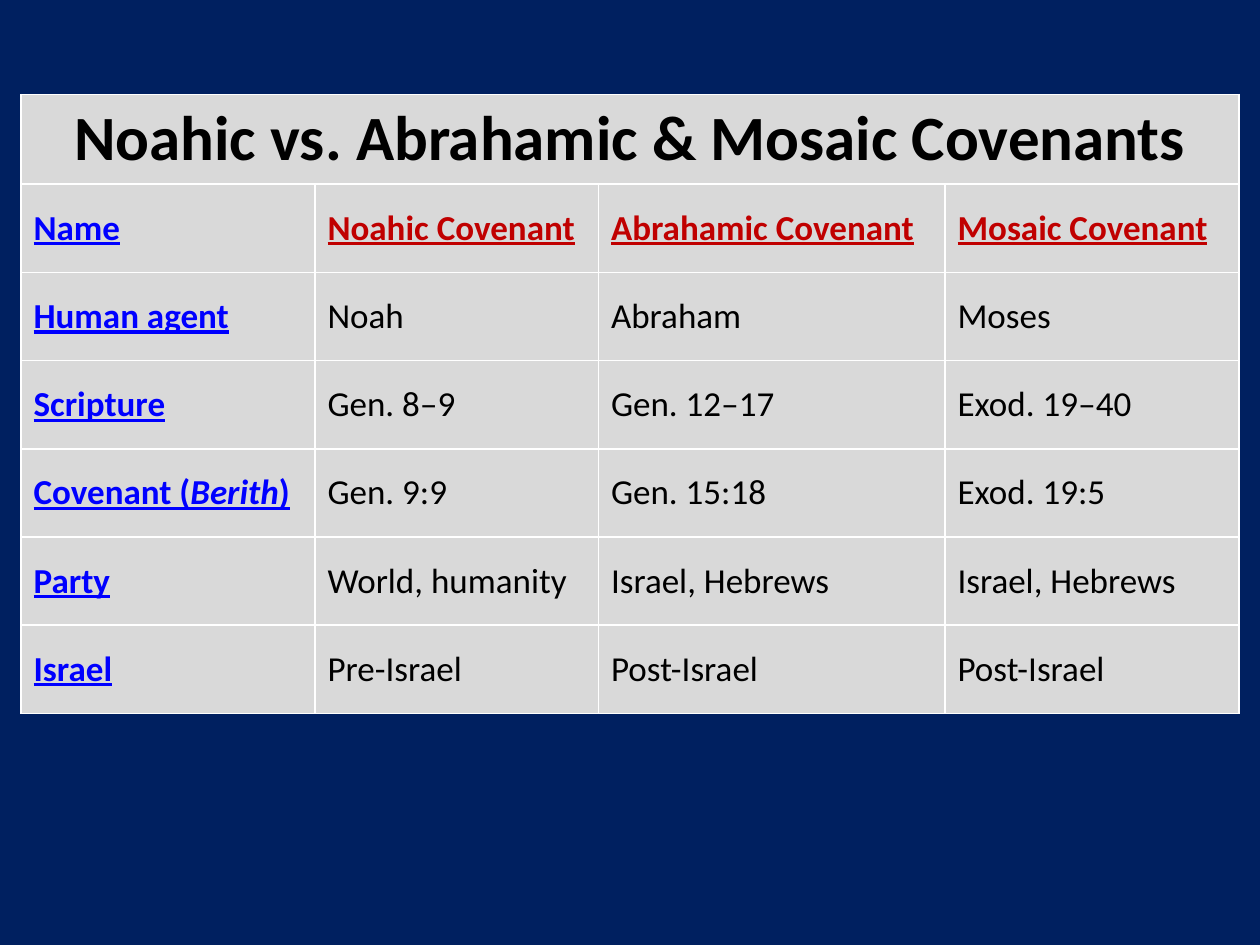
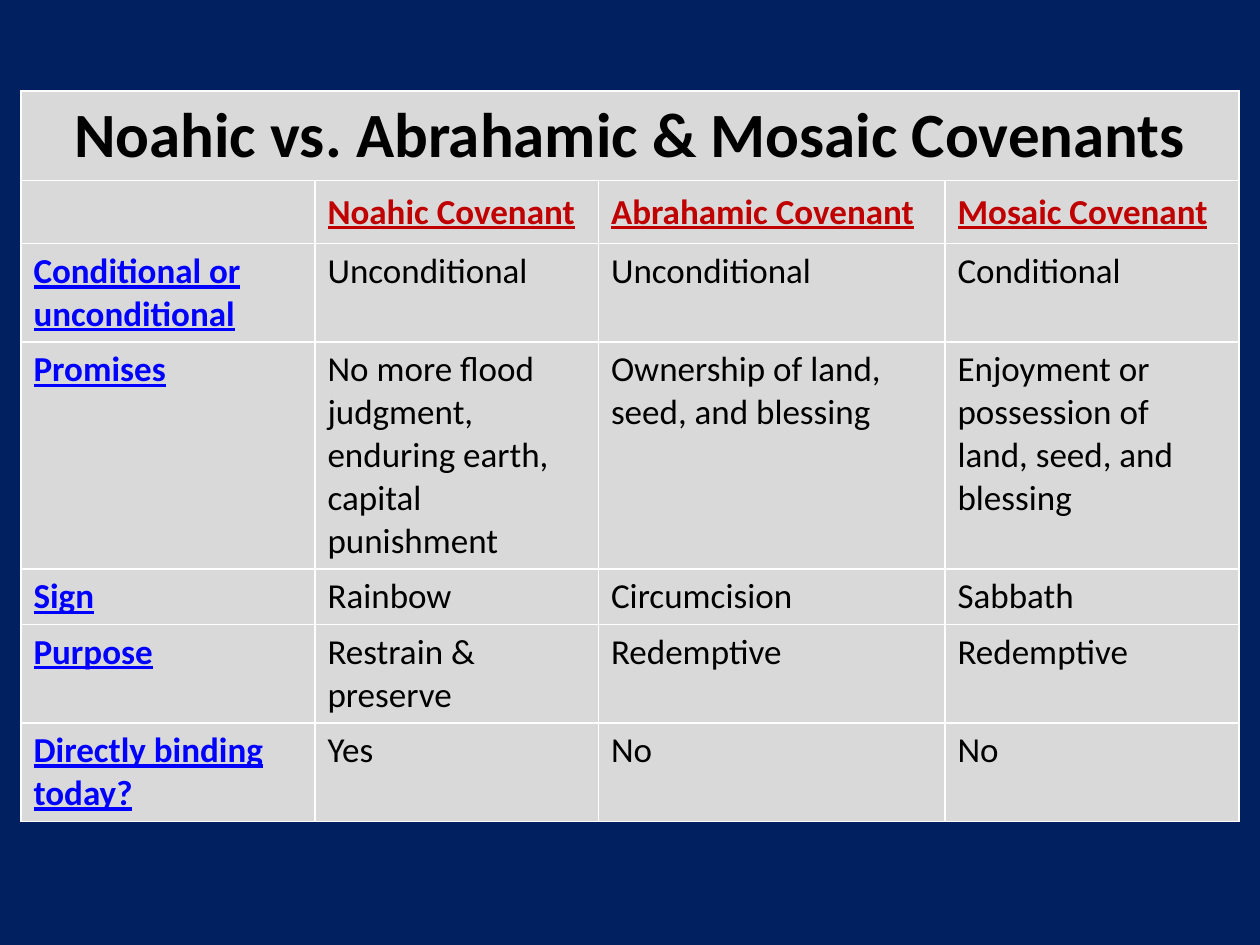
from dataclasses import dataclass

from lxml.etree import SubElement
from pptx import Presentation
from pptx.dml.color import RGBColor as Rgb
from pptx.enum.text import MSO_ANCHOR as Anchor, PP_ALIGN as Align
from pptx.oxml.ns import qn
from pptx.util import Pt


@dataclass(frozen=True)
class Theme:
    back: str = "002060"
    panel: str = "D9D9D9"
    rule: str = "FFFFFF"
    ink: str = "000000"
    label: str = "0000FF"
    head: str = "C00000"
    font: str = "Calibri"
    title: int = 36
    body: int = 20


theme = Theme()
title = "Noahic vs. Abrahamic & Mosaic Covenants"
heads = ["Noahic Covenant", "Abrahamic Covenant", "Mosaic Covenant"]
widths = [168, 162, 198, 168]
left = 12

# Asterisks enclose italic words.
tables = [
    {
        "top": 54,
        "heights": [50.4] * 7,
        "anchor": Anchor.MIDDLE,
        "rows": [
            ["Name", *heads],
            ["Human agent", "Noah", "Abraham", "Moses"],
            ["Scripture", "Gen. 8‒9", "Gen. 12‒17", "Exod. 19‒40"],
            ["Covenant (*Berith*)", "Gen. 9:9", "Gen. 15:18", "Exod. 19:5"],
            ["Party", "World, humanity", "Israel, Hebrews", "Israel, Hebrews"],
            ["Israel", "Pre-Israel", "Post-Israel", "Post-Israel"],
        ],
    },
    {
        "top": 52,
        "heights": [50.4, 36, 55.4, 127.4, 31, 55.4, 55.4],
        "anchor": Anchor.TOP,
        "rows": [
            ["", *heads],
            ["Conditional or unconditional", "Unconditional", "Unconditional",
             "Conditional"],
            ["Promises",
             "No more flood judgment, enduring earth, capital punishment",
             "Ownership of land, seed, and blessing",
             "Enjoyment or possession of land, seed, and blessing"],
            ["Sign", "Rainbow", "Circumcision", "Sabbath"],
            ["Purpose", "Restrain & preserve", "Redemptive", "Redemptive"],
            ["Directly binding today?", "Yes", "No", "No"],
        ],
    },
]


def dress(cell):
    """Give a cell its white borders and grey fill."""
    props = cell._tc.get_or_add_tcPr()
    for side in ("lnL", "lnR", "lnT", "lnB"):
        line = SubElement(props, qn(f"a:{side}"), w=str(Pt(1)))
        fill = SubElement(line, qn("a:solidFill"))
        SubElement(fill, qn("a:srgbClr"), val=theme.rule)
    cell.fill.solid()
    cell.fill.fore_color.rgb = Rgb.from_string(theme.panel)


def write(cell, text, size, color, bold, under=False):
    para = cell.text_frame.paragraphs[0]
    font = para.font
    font.name, font.size = theme.font, Pt(size)
    font.bold, font.underline = bold, under
    font.color.rgb = Rgb.from_string(color)
    for i, part in enumerate(text.split("*")):
        if part:
            run = para.add_run()
            run.text = part
            if i % 2:
                run.font.italic = True
    return para


deck = Presentation()
deck.slide_width, deck.slide_height = Pt(720), Pt(540)
back = deck.slide_master.background.fill
back.solid()
back.fore_color.rgb = Rgb.from_string(theme.back)

for data in tables:
    slide = deck.slides.add_slide(deck.slide_layouts[6])
    heights = data["heights"]
    grid = slide.shapes.add_table(
        len(heights), len(widths), Pt(left), Pt(data["top"]),
        Pt(sum(widths)), Pt(sum(heights))).table
    grid.first_row = grid.horz_banding = False
    for col, width in zip(grid.columns, widths):
        col.width = Pt(width)
    for row, height in zip(grid.rows, heights):
        row.height = Pt(height)
    for cell in grid.iter_cells():
        dress(cell)

    top = grid.cell(0, 0)
    top.merge(grid.cell(0, len(widths) - 1))
    top.vertical_anchor = Anchor.MIDDLE
    write(top, title, theme.title, theme.ink, True).alignment = Align.CENTER

    for r, row in enumerate(data["rows"], 1):
        for c, text in enumerate(row):
            cell = grid.cell(r, c)
            cell.vertical_anchor = Anchor.MIDDLE if r == 1 else data["anchor"]
            key = r == 1 or c == 0
            color = theme.label if c == 0 else theme.head if r == 1 else theme.ink
            write(cell, text, theme.body, color, key, key)

deck.save("out.pptx")
